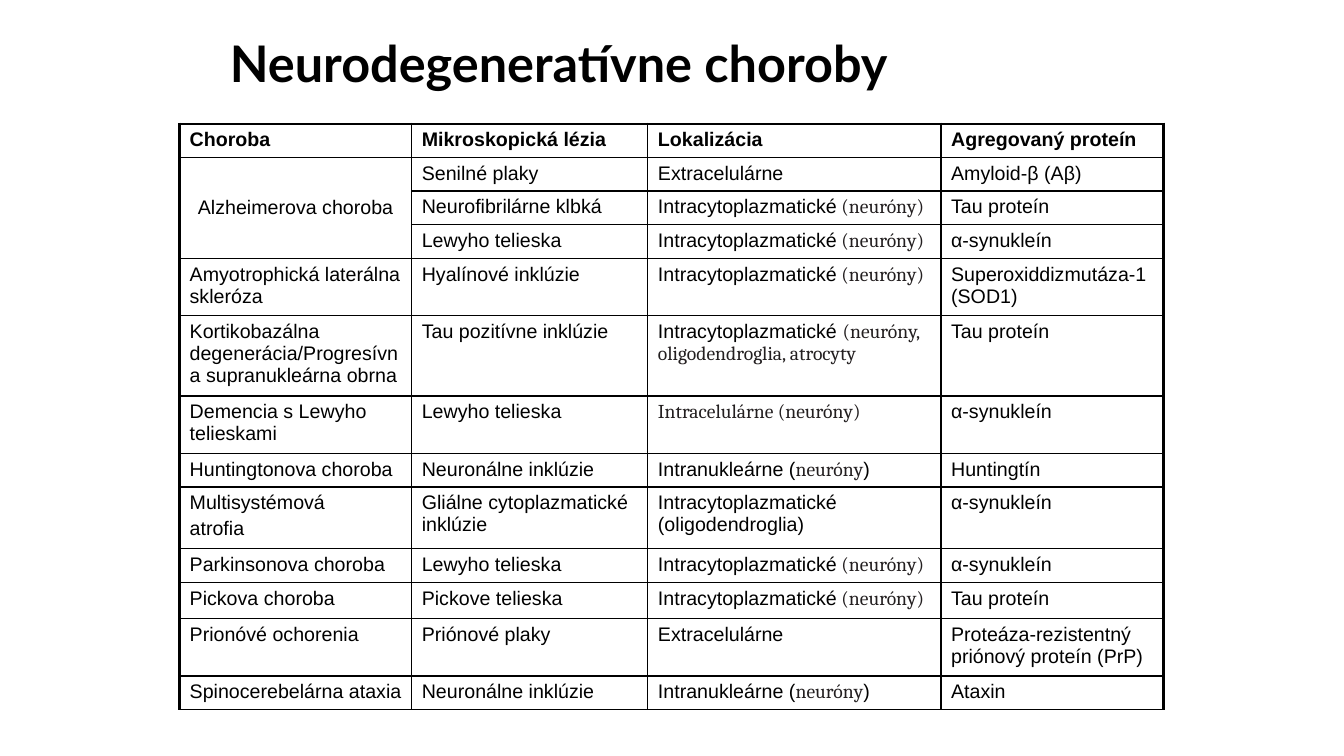
from dataclasses import dataclass

from lxml import etree
from pptx import Presentation
from pptx import util as u
from pptx.dml.color import RGBColor
from pptx.enum import text
from pptx.oxml.ns import qn


@dataclass(frozen=True)
class Theme:
    ink: str = "000000"
    soft_ink: str = "231F20"
    title_font: str = "Lato"
    body_font: str = "Arial"
    aside_font: str = "Cambria"
    title_size: float = 36
    body_size: float = 14
    paragraph_gap: float = 2.8
    outer_line: float = 2.25
    inner_line: float = 1


def write(frame, content, *, font, size, color, bold=False, align=text.PP_ALIGN.LEFT,
          aside_font=None, aside_color=None, gap=0):
    """Newlines part paragraphs; pieces between | marks take the aside format."""
    for number, line in enumerate(content.split("\n")):
        paragraph = frame.add_paragraph() if number else frame.paragraphs[0]
        paragraph.alignment = align
        if number:
            paragraph.space_before = u.Pt(gap)
        for order, piece in enumerate(line.split("|")):
            if not piece:
                continue
            aside = order % 2 == 1
            run = paragraph.add_run()
            run.text = piece
            run.font.name = aside_font if aside else font
            run.font.size = u.Pt(size)
            run.font.bold = bold
            run.font.color.rgb = RGBColor.from_string(aside_color if aside else color)


class DiseaseSlide:
    def __init__(self, theme, width, height):
        self.theme = theme
        self.deck = Presentation()
        self.deck.slide_width, self.deck.slide_height = u.Pt(width), u.Pt(height)
        self.slide = self.deck.slides.add_slide(self.deck.slide_layouts[5])

    def title(self, content, left, top, width, height):
        heading = self.slide.shapes.title
        heading.left, heading.top = u.Pt(left), u.Pt(top)
        heading.width, heading.height = u.Pt(width), u.Pt(height)
        frame = heading.text_frame
        frame.auto_size = text.MSO_AUTO_SIZE.NONE
        frame.vertical_anchor = text.MSO_ANCHOR.MIDDLE
        write(frame, content, font=self.theme.title_font, size=self.theme.title_size,
              color=self.theme.ink, bold=True)

    def border(self, cell, side, weight):
        line = etree.SubElement(cell._tc.get_or_add_tcPr(), qn(f"a:ln{side}"),
                                w=str(u.Pt(weight)))
        fill = etree.SubElement(line, qn("a:solidFill"))
        etree.SubElement(fill, qn("a:srgbClr"), val=self.theme.ink)

    def table(self, rows, left, top, widths, heights, merged):
        """merged holds (first row, last row, column) of a vertical span."""
        theme = self.theme
        grid = self.slide.shapes.add_table(
            len(rows), len(widths), u.Pt(left), u.Pt(top),
            u.Pt(sum(widths)), u.Pt(sum(heights))).table
        grid.first_row = grid.horz_banding = False
        for column, width in zip(grid.columns, widths):
            column.width = u.Pt(width)
        for row, height in zip(grid.rows, heights):
            row.height = u.Pt(height)

        first, last, span_column = merged
        grid.cell(first, span_column).merge(grid.cell(last, span_column))
        for r, entries in enumerate(rows):
            for c, entry in enumerate(entries):
                cell = grid.cell(r, c)
                outer = {"L": c == 0, "R": c == len(widths) - 1, "T": r == 0, "B": False}
                for side, is_outer in outer.items():
                    self.border(cell, side, theme.outer_line if is_outer else theme.inner_line)
                cell.fill.background()
                if cell.is_spanned:
                    continue
                cell.margin_left = cell.margin_right = u.Pt(7.2)
                cell.margin_top = cell.margin_bottom = u.Pt(3.6)
                spans = cell.is_merge_origin
                cell.vertical_anchor = text.MSO_ANCHOR.MIDDLE if spans else text.MSO_ANCHOR.TOP
                write(cell.text_frame, entry, font=theme.body_font, size=theme.body_size,
                      color=theme.ink, bold=r == 0,
                      align=text.PP_ALIGN.CENTER if spans else text.PP_ALIGN.LEFT,
                      aside_font=theme.aside_font, aside_color=theme.soft_ink,
                      gap=theme.paragraph_gap)


IN_NEURONS = "Intracytoplazmatické| (neuróny)|"
IN_NUCLEI = "Intranukleárne (|neuróny|)"
DISEASES = [
    ("Choroba", "Mikroskopická lézia", "Lokalizácia", "Agregovaný proteín"),
    ("Alzheimerova choroba", "Senilné plaky", "Extracelulárne", "Amyloid-β (Aβ)"),
    ("", "Neurofibrilárne klbká", IN_NEURONS, "Tau proteín"),
    ("", "Lewyho telieska", IN_NEURONS, "α-synukleín"),
    ("Amyotrophická laterálna skleróza", "Hyalínové inklúzie", IN_NEURONS,
     "Superoxiddizmutáza-1 (SOD1)"),
    ("Kortikobazálna degenerácia/Progresívna supranukleárna obrna",
     "Tau pozitívne inklúzie",
     "Intracytoplazmatické |(neuróny, oligodendroglia, atrocyty|", "Tau proteín"),
    ("Demencia s Lewyho telieskami", "Lewyho telieska",
     "|Intracelulárne (neuróny)|", "α-synukleín"),
    ("Huntingtonova choroba", "Neuronálne inklúzie", IN_NUCLEI, "Huntingtín"),
    ("Multisystémová\natrofia", "Gliálne cytoplazmatické inklúzie",
     "Intracytoplazmatické (oligodendroglia)", "α-synukleín"),
    ("Parkinsonova choroba", "Lewyho telieska", IN_NEURONS, "α-synukleín"),
    ("Pickova choroba", "Pickove telieska", IN_NEURONS, "Tau proteín"),
    ("Prionóvé ochorenia", "Priónové plaky", "Extracelulárne",
     "Proteáza-rezistentný priónový proteín (PrP)"),
    ("Spinocerebelárna ataxia", "Neuronálne inklúzie", IN_NUCLEI, "Ataxin"),
]
ONE_LINE, TWO_LINES = 24, 41
ROW_HEIGHTS = [ONE_LINE] * 4 + [TWO_LINES, 57.5, TWO_LINES, ONE_LINE, 44,
                                ONE_LINE, 26, TWO_LINES, ONE_LINE]


def main():
    page = DiseaseSlide(Theme(), 960, 540)
    page.title("Neurodegeneratívne choroby", 157, 26, 648, 37.5)
    page.table(DISEASES, 128.3, 88.5, [165.8, 168.7, 209.4, 158.7], ROW_HEIGHTS,
               merged=(1, 3, 0))
    page.deck.save("out.pptx")


if __name__ == "__main__":
    main()
